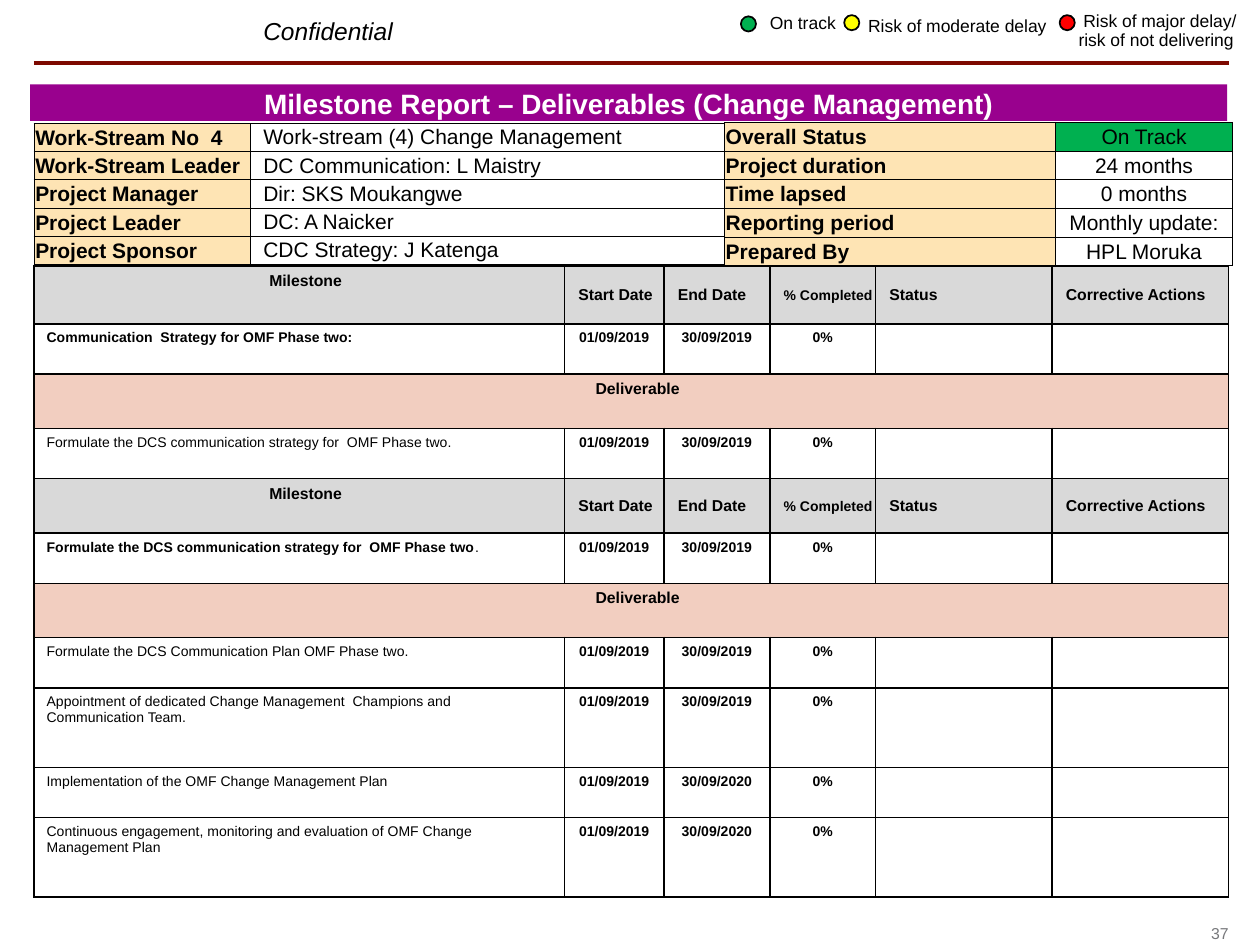
from lxml import etree
from pptx import Presentation
from pptx.dml.color import RGBColor
from pptx.enum.shapes import MSO_CONNECTOR, MSO_SHAPE
from pptx.enum.text import MSO_ANCHOR, PP_ALIGN
from pptx.oxml.ns import qn
from pptx.util import Inches, Pt

LEFT, CENTER, RIGHT = PP_ALIGN.LEFT, PP_ALIGN.CENTER, PP_ALIGN.RIGHT
TOP, MIDDLE = MSO_ANCHOR.TOP, MSO_ANCHOR.MIDDLE
OVAL, RECTANGLE = MSO_SHAPE.OVAL, MSO_SHAPE.RECTANGLE
STRAIGHT = MSO_CONNECTOR.STRAIGHT

FONT = "Arial"
BLACK, WHITE = "000000", "FFFFFF"
GREEN, YELLOW, RED = "00B050", "FFFF00", "FF0000"
CREAM, GREY, PEACH = "FEE4B4", "D9D9D9", "F2CEC0"
THIN, THICK = 0.5, 1
TIGHT = (0.01, 0.01, 0.01, 0)
NORMAL = (0.1, 0.05, 0.1, 0.05)
INDENT = 0.1

STREAM_INFO = [
    ("Work-Stream No  4", "Work-stream (4) Change Management"),
    ("Work-Stream Leader", "DC Communication: L Maistry"),
    ("Project Manager", "Dir: SKS Moukangwe"),
    ("Project Leader", "DC: A Naicker"),
    ("Project Sponsor", "CDC Strategy: J Katenga"),
]
STATUS_INFO = [
    ("Overall Status", "On Track"),
    ("Project duration", "24 months"),
    ("Time lapsed", "0 months"),
    ("Reporting period", "Monthly update:"),
    ("Prepared By", "HPL Moruka"),
]
HEADINGS = ["Start Date", "End Date", "% Completed", "Status", "Corrective Actions"]
START = "01/09/2019"
# Row kind, height, description, end date
PLAN = [
    ("heading", 0.46, "Milestone", None),
    ("milestone", 0.4, "Communication  Strategy for OMF Phase two:", "30/09/2019"),
    ("band", 0.43, "Deliverable", None),
    ("task", 0.4, "Formulate the DCS communication strategy for  OMF Phase two.", "30/09/2019"),
    ("heading", 0.43, "Milestone", None),
    ("milestone", 0.4, "Formulate the DCS communication strategy for  OMF Phase two", "30/09/2019"),
    ("band", 0.43, "Deliverable", None),
    ("task", 0.4, "Formulate the DCS Communication Plan OMF Phase two.", "30/09/2019"),
    ("task", 0.63, "Appointment of dedicated Change Management  Champions and "
     "Communication Team.", "30/09/2019"),
    ("task", 0.4, "Implementation of the OMF Change Management Plan", "30/09/2020"),
    ("task", 0.63, "Continuous engagement, monitoring and evaluation of OMF Change "
     "Management Plan", "30/09/2020"),
]
UNBOLD_STOP_ROW = 5
THIN_RULE_ROW = 9
STATUS_COLUMN = 4


def rgb(color):
    return RGBColor.from_string(color)


def write(paragraph, text, size, color=BLACK, bold=False, italic=False,
          align=LEFT, indent=0):
    paragraph.alignment = align
    if indent:
        properties = paragraph._p.get_or_add_pPr()
        properties.set("marL", str(Inches(indent)))
        properties.set("indent", "0")
    font = paragraph.font
    font.name, font.size, font.bold, font.italic = FONT, Pt(size), bold, italic
    font.color.rgb = rgb(color)
    if text:
        paragraph.add_run().text = text


def add_label(slide, left, top, width, height, text, size, inset=0.08,
              anchor=TOP, spacing=1, **style):
    frame = slide.shapes.add_textbox(
        Inches(left), Inches(top), Inches(width), Inches(height)).text_frame
    frame.word_wrap = True
    frame.vertical_anchor = anchor
    frame.margin_left = frame.margin_right = Inches(inset)
    frame.margin_top = frame.margin_bottom = Inches(inset)
    write(frame.paragraphs[0], text, size, **style)
    frame.paragraphs[0].line_spacing = spacing


def add_filled(slide, kind, left, top, width, height, fill, outlined=False):
    shape = slide.shapes.add_shape(
        kind, Inches(left), Inches(top), Inches(width), Inches(height))
    shape.shadow.inherit = False
    shape.fill.solid()
    shape.fill.fore_color.rgb = rgb(fill)
    if outlined:
        shape.line.color.rgb = rgb(BLACK)
        shape.line.width = Pt(1)
    else:
        shape.line.fill.background()
    return shape


def add_rule(slide, left, right, y, color, width):
    rule = slide.shapes.add_connector(
        STRAIGHT, Inches(left), Inches(y), Inches(right), Inches(y))
    rule.line.color.rgb = rgb(color)
    rule.line.width = Pt(width)
    etree.SubElement(rule._element.spPr, qn("a:effectLst"))


def add_grid(slide, left, top, columns, rows):
    table = slide.shapes.add_table(
        len(rows), len(columns), Inches(left), Inches(top),
        Inches(sum(columns)), Inches(sum(rows))).table
    table.first_row = table.horz_banding = False
    for column, width in zip(table.columns, columns):
        column.width = Inches(width)
    for row, height in zip(table.rows, rows):
        row.height = Inches(height)
    return table


def set_borders(cell, **widths):
    """Draw black borders; keys are L, R, T and B, values are points."""
    properties = cell._tc.get_or_add_tcPr()
    for side in "LRTB":
        line = etree.SubElement(properties, qn(f"a:ln{side}"), w=str(Pt(widths[side])))
        fill = etree.SubElement(line, qn("a:solidFill"))
        etree.SubElement(fill, qn("a:srgbClr"), val=BLACK)


def fill_cell(cell, text, size, fill=None, inset=NORMAL, anchor=TOP, **style):
    cell.margin_left, cell.margin_top, cell.margin_right, cell.margin_bottom = map(
        Inches, inset)
    cell.vertical_anchor = anchor
    if fill:
        cell.fill.solid()
        cell.fill.fore_color.rgb = rgb(fill)
    else:
        cell.fill.background()
    write(cell.text_frame.paragraphs[0], text, size, **style)


def add_info_table(slide, left, top, columns, row_height, facts, **value_style):
    table = add_grid(slide, left, top, columns, [row_height] * len(facts))
    for r, (name, value) in enumerate(facts):
        for c in range(2):
            set_borders(table.cell(r, c), L=THIN, R=THIN, T=THIN, B=THIN)
        fill_cell(table.cell(r, 0), name, 12, CREAM, TIGHT, MIDDLE, bold=True)
        fill_cell(table.cell(r, 1), value, 12, GREEN if value == "On Track" else None,
                  anchor=MIDDLE, **value_style)


def add_plan_table(slide):
    columns = [4.21, 0.79, 0.84, 0.84, 1.4, 1.4]
    table = add_grid(slide, 0.27, 2.11, columns, [row[1] for row in PLAN])
    for r, (kind, _, text, end) in enumerate(PLAN):
        cells = [table.cell(r, c) for c in range(len(columns))]
        for c, cell in enumerate(cells):
            set_borders(cell,
                        L=THIN if c == STATUS_COLUMN else THICK,
                        R=THIN if c == STATUS_COLUMN - 1 else THICK,
                        T=THIN if r == THIN_RULE_ROW else THICK,
                        B=THIN if r == THIN_RULE_ROW - 1 else THICK)
        if kind in ("heading", "band"):
            fill_cell(cells[0], text, 9, GREY if kind == "heading" else PEACH,
                      bold=True, align=CENTER, indent=INDENT)
        else:
            fill_cell(cells[0], text, 8, bold=kind == "milestone")
        if kind == "band":
            cells[0].merge(cells[-1])
        elif kind == "heading":
            for cell, heading in zip(cells[1:], HEADINGS):
                fill_cell(cell, heading, 8 if heading.startswith("%") else 9, GREY,
                          TIGHT, MIDDLE, bold=True, indent=INDENT)
        else:
            for cell, value in zip(cells[1:], [START, end, "0%", "", ""]):
                fill_cell(cell, value, 8, bold=True, align=CENTER)
    stop = table.cell(UNBOLD_STOP_ROW, 0).text_frame.paragraphs[0].add_run()
    stop.text = "."
    stop.font.bold = False


def main():
    deck = Presentation()
    deck.slide_width, deck.slide_height = Inches(10), Inches(7.5)
    slide = deck.slides.add_slide(deck.slide_layouts[6])

    add_rule(slide, 0.27, 9.75, 0.5, "7D0900", 2.25)
    add_label(slide, 9.46, 7.33, 0.29, 0.15, "37", 9, inset=0, anchor=MIDDLE,
              color="77787B", align=RIGHT)
    add_label(slide, 2.01, 0.05, 1.84, 0.39, "Confidential", 14, italic=True)

    for x, y, color in [(5.88, 0.13, GREEN), (6.7, 0.12, YELLOW), (8.41, 0.12, RED)]:
        add_filled(slide, OVAL, x, y, 0.12, 0.12, color, outlined=True)
    for x, y, width, height, meaning in [
            (6.03, 0.04, 0.79, 0.31, "On track"),
            (6.81, 0.06, 1.65, 0.31, "Risk of moderate delay"),
            (8.48, 0.02, 1.45, 0.46, " Risk of major delay/ risk of not delivering")]:
        add_label(slide, x, y, width, height, meaning, 10, spacing=0.9)

    add_info_table(slide, 0.27, 0.98, [1.72, 3.77], 0.224, STREAM_INFO,
                   inset=(0, 0, 0, 0), indent=INDENT)
    add_info_table(slide, 5.75, 0.97, [2.63, 1.4], 0.228, STATUS_INFO,
                   inset=TIGHT, align=CENTER)

    banner = add_filled(slide, RECTANGLE, 0.24, 0.67, 9.5, 0.29, "99018E")
    banner.text_frame.vertical_anchor = TOP
    title = banner.text_frame.paragraphs[0]
    write(title, "Milestone Report – Deliverables (Change Management)", 16, WHITE,
          bold=True, align=CENTER)
    title.line_spacing = 0.9

    add_plan_table(slide)
    deck.save("out.pptx")


if __name__ == "__main__":
    main()
